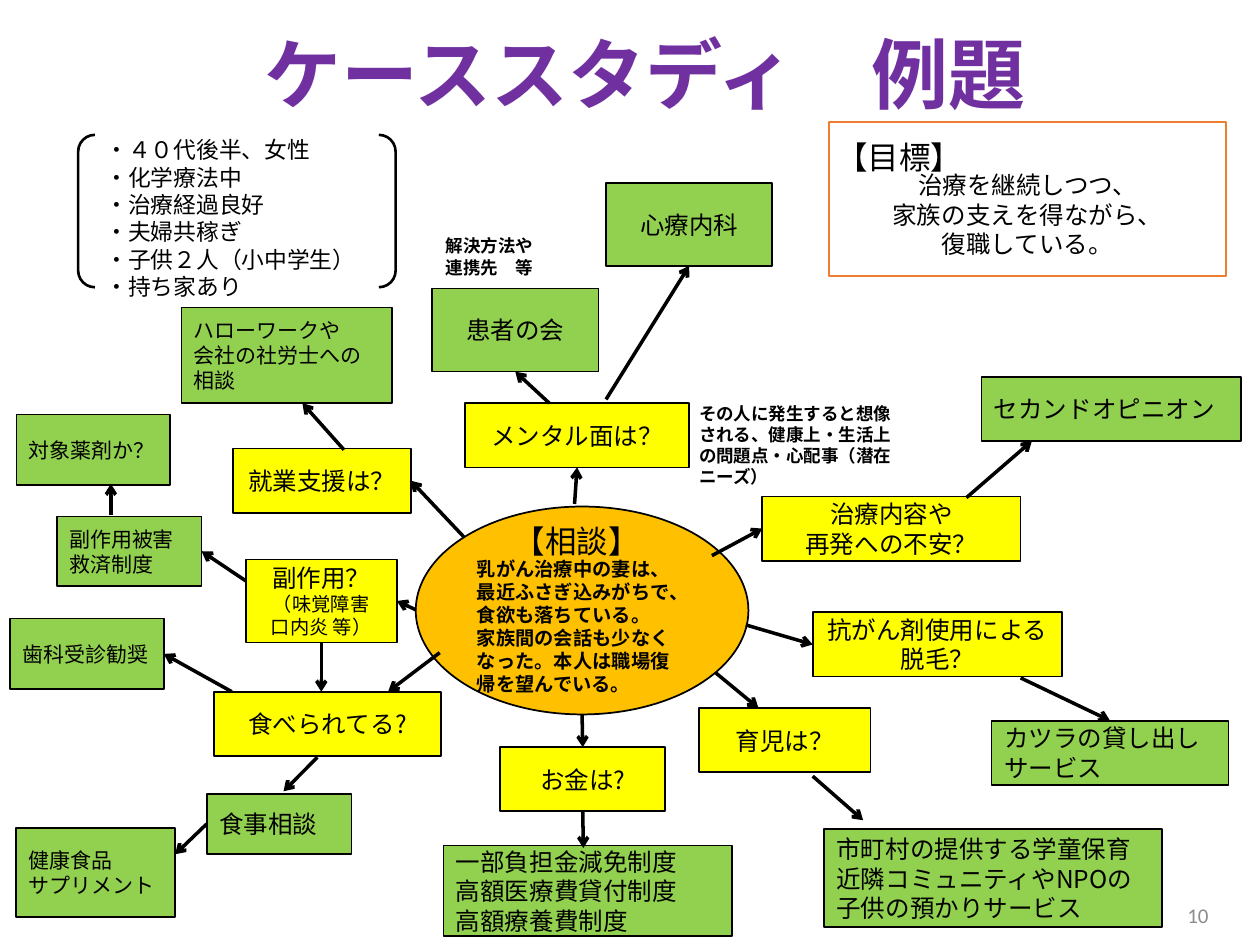
from dataclasses import dataclass

from lxml import etree
from pptx import Presentation
from pptx.dml.color import RGBColor
from pptx.enum.shapes import MSO_CONNECTOR, MSO_SHAPE
from pptx.enum.text import MSO_ANCHOR, PP_ALIGN
from pptx.oxml.ns import qn
from pptx.util import Inches, Pt

RECT, OVAL, BRACKETS = MSO_SHAPE.RECTANGLE, MSO_SHAPE.OVAL, MSO_SHAPE.DOUBLE_BRACKET
STRAIGHT = MSO_CONNECTOR.STRAIGHT
LEFT, CENTER, RIGHT = PP_ALIGN.LEFT, PP_ALIGN.CENTER, PP_ALIGN.RIGHT
TOP, MIDDLE = MSO_ANCHOR.TOP, MSO_ANCHOR.MIDDLE
SITE = {"top": 0, "left": 1, "bottom": 2, "right": 3}


@dataclass(frozen=True)
class Theme:
    font: str = "Noto Sans CJK JP"
    latin_font: str = "Calibri"
    ink: str = "000000"
    title: str = "7030A0"
    concern: str = "FFFF00"
    solution: str = "92D050"
    patient: str = "FFC000"
    goal_line: str = "ED7D31"
    paper: str = "FFFFFF"
    page: str = "8C8C8C"
    title_size: int = 44
    heading: int = 18
    body: int = 14
    profile: int = 13
    small: int = 12
    detail: int = 11
    label: int = 10


THEME = Theme()

# key: (box, lines); each topic is a concern raised by the patient's situation
CONCERNS = {
    "mental": ((3.69, 3.2, 1.78, 0.51), ["メンタル面は？"]),
    "work": ((1.85, 3.56, 1.41, 0.51), ["就業支援は？"]),
    "treatment": ((6.05, 3.94, 2.05, 0.51), ["治療内容や", "再発への不安？"]),
    "eating": ((1.7, 5.49, 1.8, 0.51), ["食べられてる?"]),
    "childcare": ((5.55, 5.62, 1.36, 0.51), ["育児は？"]),
    "money": ((3.97, 5.93, 1.31, 0.51), ["お金は?"]),
    "side_effects": ((1.95, 4.44, 1.2, 0.66), ["副作用？", "（味覚障害", "口内炎 等）"]),
    "hair_loss": ((6.45, 4.86, 1.98, 0.51), ["抗がん剤使用による脱毛？"]),
}

# key: (box, lines, size, alignment)
SOLUTIONS = {
    "patient_group": ((3.43, 2.29, 1.32, 0.66), ["患者の会"], THEME.body, CENTER),
    "psychosomatic": ((4.81, 1.45, 1.32, 0.66), ["心療内科"], THEME.body, CENTER),
    "second_opinion": ((7.79, 2.99, 2.06, 0.51), ["セカンドオピニオン"], THEME.body, LEFT),
    "child_services": ((6.54, 6.58, 2.68, 0.78),
                       ["市町村の提供する学童保育", "近隣コミュニティやNPOの子供の預かりサービス"],
                       THEME.body, LEFT),
    "diet_advice": ((1.64, 6.3, 1.15, 0.48), ["食事相談"], THEME.body, LEFT),
    "subsidies": ((3.52, 6.71, 2.29, 0.72),
                  ["一部負担金減免制度", "高額医療費貸付制度", "高額療養費制度"], THEME.body, LEFT),
    "supplements": ((0.13, 6.57, 1.26, 0.71), ["健康食品", "サプリメント"], THEME.small, LEFT),
    "dentist": ((0.08, 4.91, 1.22, 0.56), ["歯科受診勧奨"], THEME.small, LEFT),
    "job_office": ((1.44, 2.44, 1.67, 0.76), ["ハローワークや", "会社の社労士への相談"],
                   THEME.small, LEFT),
    "wig_rental": ((7.87, 5.72, 1.88, 0.51), ["カツラの貸し出しサービス"], THEME.body, LEFT),
    "relief_system": ((0.45, 4.1, 1.15, 0.55), ["副作用被害救済制度"], THEME.small, LEFT),
    "covered_drug": ((0.13, 3.29, 1.22, 0.56), ["対象薬剤か？"], THEME.small, LEFT),
}

# Each end is a free point or the (topic, side) it is joined to
ARROWS = [
    ((5.65, 4.41), ("treatment", "left")),
    ((3.49, 5.18), (3.08, 5.49)),
    ((4.62, 5.67), ("money", "top")),
    ((5.68, 5.34), (6.02, 5.62)),
    ((3.68, 4.26), ("work", "right")),
    ((4.56, 4.0), ("mental", "bottom")),
    ((5.92, 4.96), ("hair_loss", "left")),
    ((3.3, 4.84), ("side_effects", "right")),
    ((4.36, 3.2), ("patient_group", "bottom")),
    ((4.81, 3.17), ("psychosomatic", "bottom")),
    ((7.67, 3.95), (8.19, 3.5)),
    ((6.45, 6.16), (6.85, 6.51)),
    ((2.52, 6.01), (2.25, 6.28)),
    (("money", "bottom"), (4.63, 6.73)),
    ((8.1, 5.38), ("wig_rental", "top")),
    (("side_effects", "bottom"), (2.55, 5.49)),
    (("diet_advice", "left"), (1.39, 6.78)),
    ((1.84, 5.49), ("dentist", "right")),
    ((2.73, 3.57), (2.4, 3.2)),
    ((1.95, 4.61), ("relief_system", "right")),
    ((0.88, 4.09), (0.88, 3.84)),
]


def write(shape, lines, size, align=LEFT, anchor=MIDDLE, color=THEME.ink,
          bold=False, font=THEME.font, wrap=True, rest_size=None):
    """Fill a shape with one paragraph per line; rest_size applies after the first."""
    frame = shape.text_frame
    frame.word_wrap = wrap
    frame.vertical_anchor = anchor
    for index, line in enumerate(lines):
        paragraph = frame.paragraphs[0] if index == 0 else frame.add_paragraph()
        paragraph.alignment = align
        run = paragraph.add_run()
        run.text = line
        run.font.size = Pt(rest_size if rest_size and index else size)
        run.font.bold = bold
        run.font.name = font
        run.font.color.rgb = RGBColor.from_string(color)
        if font == THEME.font:
            etree.SubElement(run.font._element, qn("a:ea"), typeface=font)
    return frame


def add_box(slide, box, fill, line=THEME.ink, kind=RECT, width=1):
    shape = slide.shapes.add_shape(kind, *map(Inches, box))
    shape.shadow.inherit = False
    if fill:
        shape.fill.solid()
        shape.fill.fore_color.rgb = RGBColor.from_string(fill)
    else:
        shape.fill.background()
    shape.line.color.rgb = RGBColor.from_string(line)
    shape.line.width = Pt(width)
    return shape


def add_label(slide, box, lines, size, anchor=TOP, **style):
    label = slide.shapes.add_textbox(*map(Inches, box))
    return write(label, lines, size, anchor=anchor, **style)


def add_arrow(slide, start, end, topics):
    free = [point if point[0] not in topics else (0, 0) for point in (start, end)]
    arrow = slide.shapes.add_connector(STRAIGHT, *map(Inches, free[0] + free[1]))
    for point, join in ((start, arrow.begin_connect), (end, arrow.end_connect)):
        if point[0] in topics:
            join(topics[point[0]], SITE[point[1]])
    arrow.line.width = Pt(2)
    arrow.line.color.rgb = RGBColor.from_string(THEME.ink)
    etree.SubElement(arrow.line._get_or_add_ln(), qn("a:tailEnd"), type="arrow")
    etree.SubElement(arrow._element.spPr, qn("a:effectLst"))


def add_goal(slide, box):
    left, top = box[:2]
    goal = add_box(slide, box, THEME.paper, THEME.goal_line)
    frame = write(goal, ["治療を継続しつつ、", "家族の支えを得ながら、", "復職している。"],
                  THEME.body, CENTER)
    frame.margin_top = Inches(0.29)
    add_label(slide, (left - 0.04, top + 0.08, 1.21, 0.4), ["【目標】"], THEME.heading, wrap=False)


def add_consultation(slide, box):
    left, top = box[:2]
    oval = add_box(slide, box, THEME.patient, kind=OVAL)
    frame = write(oval, ["乳がん治療中の妻は、最近ふさぎ込みがちで、食欲も落ちている。",
                         "家族間の会話も少なくなった。本人は職場復帰を望んでいる。"],
                  THEME.detail, bold=True)
    frame.margin_top = Inches(0.3)
    add_label(slide, (left + 0.68, top + 0.07, 1.21, 0.4), ["【相談】"], THEME.heading, wrap=False)


def add_profile(slide, box):
    left, top, width, height = box
    brackets = add_box(slide, box, None, kind=BRACKETS, width=1.5)
    brackets.adjustments[0] = 0.11
    add_label(slide, (left + 0.12, top - 0.04, width + 0.54, height + 0.2),
              ["・４０代後半、女性", "・化学療法中", "・治療経過良好", "・夫婦共稼ぎ",
               "・子供２人（小中学生）", "・持ち家あり"], THEME.profile)


def add_topic_map(slide):
    topics = {}
    for key, (box, lines) in CONCERNS.items():
        topics[key] = add_box(slide, box, THEME.concern)
        write(topics[key], lines, THEME.body, CENTER,
              rest_size=THEME.detail if key == "side_effects" else None)
    for key, (box, lines, size, align) in SOLUTIONS.items():
        topics[key] = add_box(slide, box, THEME.solution)
        write(topics[key], lines, size, align)
    for start, end in ARROWS:
        add_arrow(slide, start, end, topics)


def main():
    deck = Presentation()
    deck.slide_width, deck.slide_height = Inches(10), Inches(7.5)
    slide = deck.slides.add_slide(deck.slide_layouts[6])
    title = add_label(slide, (0.62, 0.19, 9, 0.86), ["ケーススタディ　例題"], THEME.title_size,
                      anchor=MIDDLE, align=CENTER, color=THEME.title, bold=True)
    title.paragraphs[0].line_spacing = 0.9
    add_goal(slide, (6.58, 0.97, 3.15, 1.22))
    add_profile(slide, (0.62, 1.07, 2.52, 1.21))
    add_consultation(slide, (3.3, 4.02, 2.64, 1.65))
    add_topic_map(slide)
    add_label(slide, (3.44, 1.82, 0.9, 0.44), ["解決方法や", "連携先　等"], THEME.label,
              bold=True, font=THEME.latin_font, wrap=False)
    add_label(slide, (5.45, 3.15, 1.84, 0.61),
              ["その人に発生すると想像される、健康上・生活上の問題点・心配事（潜在ニーズ）"],
              THEME.label, bold=True, font=THEME.latin_font)
    add_label(slide, (7.44, 7.06, 2.25, 0.4), ["10"], THEME.small, anchor=MIDDLE,
              align=RIGHT, color=THEME.page, font=THEME.latin_font)
    deck.save("out.pptx")


if __name__ == "__main__":
    main()
